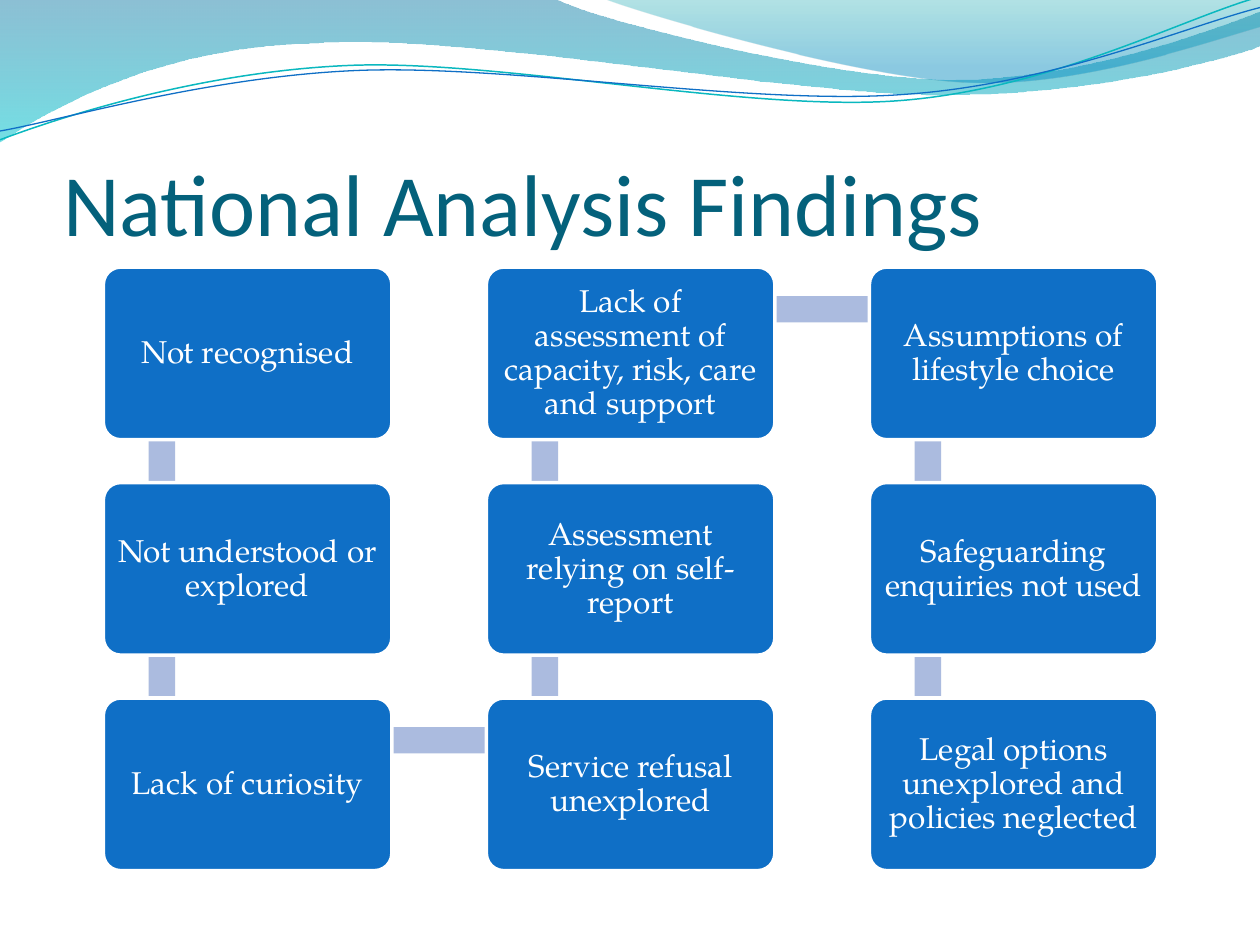
from pptx import Presentation
from pptx.dml.color import RGBColor
from pptx.enum import shapes, text
from pptx.oxml import ns
from pptx.util import Inches, Pt
from lxml import etree

WHITE = RGBColor(0xFF, 0xFF, 0xFF)
BLUE = RGBColor(0x0F, 0x6F, 0xC6)
PALE_BLUE = RGBColor(0xAB, 0xBB, 0xDF)
TITLE_TEAL = RGBColor(0x04, 0x61, 0x7B)
LINE_TEAL = RGBColor(0x0A, 0xB8, 0xBF)
DEEP_BLUE = RGBColor(0x00, 0x74, 0xA1)
AQUA = RGBColor(0x00, 0xC6, 0xCF)
SEA_GREEN = RGBColor(0x00, 0xA1, 0xA9)
SKY_BLUE = RGBColor(0x00, 0x8B, 0xBF)

prs = Presentation()
prs.slide_width, prs.slide_height = Inches(10), Inches(7.5)
s = prs.slides.add_slide(prs.slide_layouts[5])


def add_curve(segments, closed):
    """Draw points (x, y) and cubic curves (x1, y1, x2, y2, x, y), in inches."""
    ends = [(Inches(seg[-2]), Inches(seg[-1])) for seg in segments]
    fb = s.shapes.build_freeform(*ends[0])
    fb.add_line_segments(ends[1:], close=closed)
    sp = fb.convert_to_shape()
    sp.shadow.inherit = False
    # Turn the straight segments that have control points into cubic curves
    straight = list(sp._element.spPr.iter(ns.qn("a:lnTo")))
    for line_to, seg in zip(straight, segments[1:]):
        if len(seg) == 6:
            line_to.tag = ns.qn("a:cubicBezTo")
            for i in (0, 2):
                pt = etree.Element(ns.qn("a:pt"), x=str(Inches(seg[i]) - sp.left),
                                   y=str(Inches(seg[i + 1]) - sp.top))
                line_to.insert(i // 2, pt)
    return sp


def add_block(kind, x, y, w, h, color):
    sp = s.shapes.add_shape(kind, Inches(x), Inches(y), Inches(w), Inches(h))
    sp.shadow.inherit = False
    sp.fill.solid()
    sp.fill.fore_color.rgb = color
    sp.line.fill.background()
    return sp


# Header waves: outline, then stops of (position, colour, opacity in percent)
waves = [
    ([(0, 0), (4.4, -0.01), (4.76, 0.17, 6.64, 0.63, 7.58, 0.63),
      (8.53, 0.63, 9.58, 0.26, 10, 0.09), (10.01, 0.36),
      (9.83, 0.44, 8.7, 0.76, 7.46, 0.75), (6.22, 0.75, 3.82, 0.28, 2.57, 0.34),
      (1.29, 0.36, 0.46, 0.83, -0.01, 1.13), (0, 0)],
     [(0, DEEP_BLUE, 45), (1, AQUA, 55)]),
    ([(4.79, -0.01), (5.09, 0.11, 6.82, 0.62, 7.69, 0.65),
      (8.56, 0.69, 9.61, 0.32, 10, 0.21), (10, 0), (4.79, -0.01)],
     [(0, SEA_GREEN, 30), (0.8, SKY_BLUE, 45)]),
]
for outline, stops in waves:
    sp = add_curve(outline, True)
    sp.line.fill.background()
    sp.fill.gradient()
    sp.fill.gradient_angle = 270
    for stop, (position, color, _) in zip(sp.fill.gradient_stops, stops):
        stop.position = position
        stop.color.rgb = color
    for clr, (_, _, opacity) in zip(sp._element.spPr.iter(ns.qn("a:srgbClr")), stops):
        etree.SubElement(clr, ns.qn("a:alpha"), val=str(opacity * 1000))

# Header lines
lines = [
    ([(0, 1.11), (0.48, 0.93, 1.58, 0.57, 2.77, 0.52),
      (3.95, 0.47, 5.93, 0.89, 7.13, 0.8), (8.33, 0.71, 9.38, 0.15, 9.98, -0.02)],
     LINE_TEAL, 0.85),
    ([(0, 1.04), (0.47, 0.96, 1.64, 0.61, 2.83, 0.56),
      (4.03, 0.51, 5.97, 0.84, 7.17, 0.75), (8.36, 0.67, 9.41, 0.21, 10, 0.06)],
     BLUE, 0.75),
]
for outline, color, width in lines:
    sp = add_curve(outline, False)
    sp.fill.background()
    sp.line.color.rgb = color
    sp.line.width = Pt(width)

# Title, in front of the waves
title = s.shapes.title
s.shapes._spTree.append(title._element)
title.left, title.top, title.width, title.height = map(Inches, (0.5, 0.77, 9, 1.25))
tf = title.text_frame
tf.text = "National Analysis Findings"
tf.auto_size = text.MSO_AUTO_SIZE.NONE
tf.vertical_anchor = text.MSO_ANCHOR.BOTTOM
tf.margin_left = tf.margin_right = tf.margin_bottom = 0
tf.margin_top = Inches(0.05)
p = tf.paragraphs[0]
p.alignment = text.PP_ALIGN.LEFT
font = p.runs[0].font
font.size, font.name, font.color.rgb = Pt(50), "Calibri", TITLE_TEAL

# Findings run down the first column, up the second and down the third
findings = [
    "Not recognised",
    "Not understood or explored",
    "Lack of curiosity",
    "Service refusal unexplored",
    "Assessment relying on self-report",
    "Lack of assessment of capacity, risk, care and support",
    "Assumptions of lifestyle choice",
    "Safeguarding enquiries not used",
    "Legal options unexplored and policies neglected",
]
LEFT, TOP, STEP_X, STEP_Y = 0.82, 2.12, 3.04, 1.71
BOX_W, BOX_H, BAR = 2.29, 1.37, 0.21
cells = []
for i in range(len(findings)):
    col, row = divmod(i, 3)
    if col % 2:
        row = 2 - row
    cells.append((LEFT + col * STEP_X, TOP + row * STEP_Y))

# Bars joining each finding to the next, behind the boxes
for (x, y), (next_x, next_y) in zip(cells, cells[1:]):
    if x == next_x:
        bar = (x + 0.36, min(y, next_y) + 0.34, BAR, STEP_Y)
    else:
        bar = (x + 0.47, y + 0.23, STEP_X, BAR)
    add_block(shapes.MSO_SHAPE.RECTANGLE, *bar, PALE_BLUE)

# Boxes
for (x, y), finding in zip(cells, findings):
    sp = add_block(shapes.MSO_SHAPE.ROUNDED_RECTANGLE, x, y, BOX_W, BOX_H, BLUE)
    sp.adjustments[0] = 0.1
    sp.line.color.rgb = WHITE
    sp.line.width = Pt(2)
    tf = sp.text_frame
    tf.text = finding
    tf.word_wrap = True
    tf.vertical_anchor = text.MSO_ANCHOR.MIDDLE
    tf.margin_left = tf.margin_right = tf.margin_top = tf.margin_bottom = Inches(0.07)
    p = tf.paragraphs[0]
    p.alignment = text.PP_ALIGN.CENTER
    p.line_spacing = 0.9
    font = p.runs[0].font
    font.size, font.name, font.color.rgb = Pt(18), "TeX Gyre Pagella", WHITE

prs.save("out.pptx")
